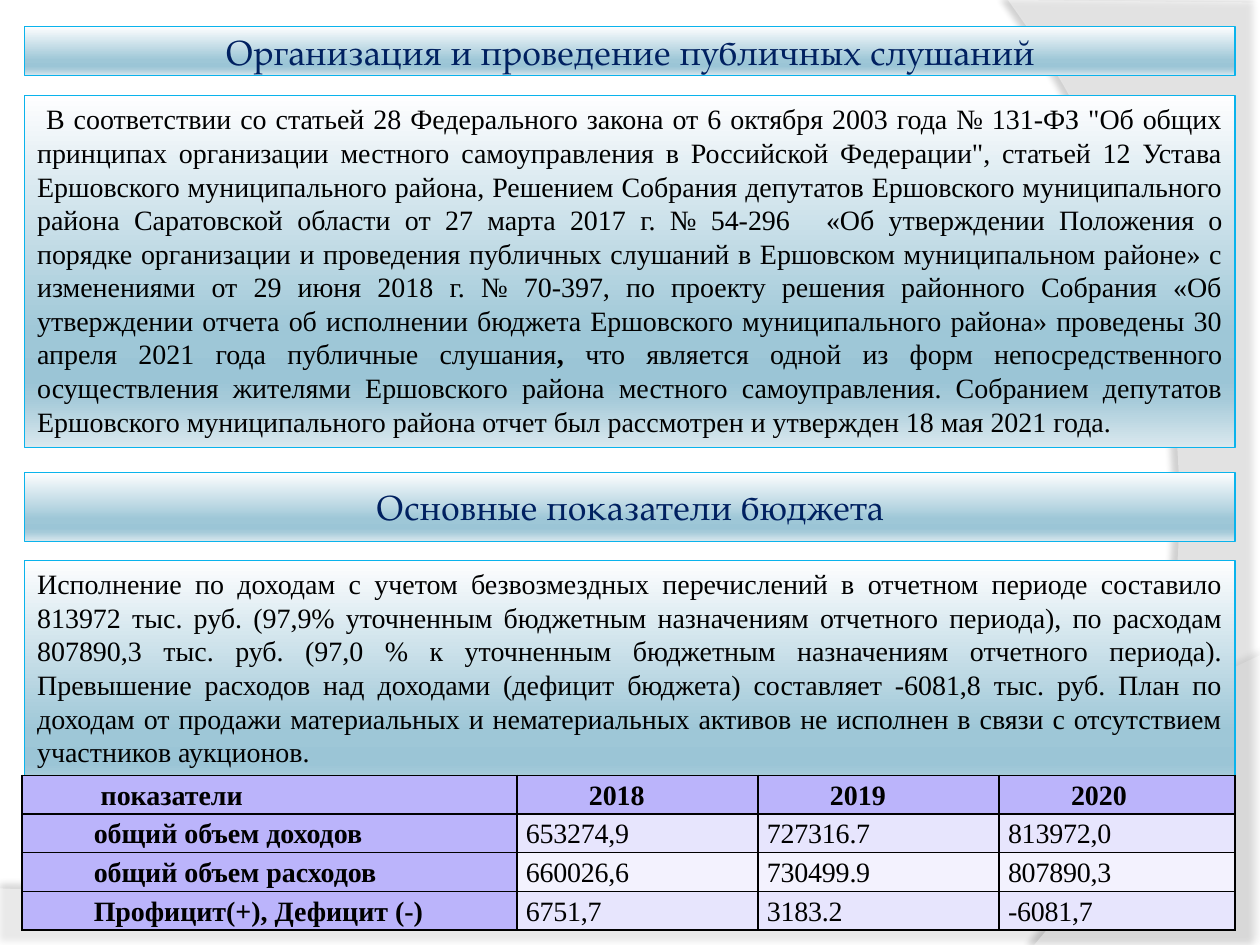
import pptx
import pptx.util
import pptx.dml.color
import pptx.enum.shapes
import pptx.enum.text
import pptx.oxml
import pptx.oxml.ns

Cm, Pt = pptx.util.Cm, pptx.util.Pt
RGB = pptx.dml.color.RGBColor
ALIGN = pptx.enum.text.PP_ALIGN
ANCHOR = pptx.enum.text.MSO_ANCHOR
qn = pptx.oxml.ns.qn

WHITE = RGB(0xFF, 0xFF, 0xFF)
BLACK = RGB(0, 0, 0)
NAVY = RGB(0x00, 0x20, 0x60)
CYAN = RGB(0x0A, 0xB3, 0xEC)
VIOLET = RGB(0xBB, 0xB4, 0xFB)
BANDS = [RGB(0xE7, 0xE5, 0xFD), RGB(0xF3, 0xF2, 0xFE)]
STOPS = [
    (0, RGB(0xFE, 0xFE, 0xFF)),
    (68, RGB(0x9E, 0xC7, 0xD7)),
    (81, RGB(0x9B, 0xC5, 0xD6)),
    (86, RGB(0xA5, 0xCA, 0xD9)),
    (100, RGB(0xDA, 0xE8, 0xEE)),
]
SERIF = "Times New Roman"
TITLE = "TeX Gyre Pagella"

LAW = [
    (' В соответствии со статьей 28 Федерального закона от 6 октября 2003 года № 131-ФЗ "Об общих '
     'принципах организации местного самоуправления в Российской Федерации", статьей 12 Устава '
     'Ершовского муниципального района, Решением Собрания депутатов Ершовского муниципального '
     'района Саратовской области от 27 марта 2017 г. № 54-296', {}),
    (" ", {"gap": 12}),
    ("«Об утверждении Положения о порядке организации и проведения публичных слушаний в Ершовском "
     "муниципальном районе» с изменениями от 29 июня 2018 г. № 70-397, по проекту решения "
     "районного Собрания «Об утверждении отчета об исполнении бюджета Ершовского муниципального "
     "района» проведены 30 апреля 2021 года публичные слушания", {}),
    (", ", {"bold": True}),
    ("что является одной из форм непосредственного осуществления жителями Ершовского района "
     "местного самоуправления. Собранием депутатов Ершовского муниципального района отчет был "
     "рассмотрен и утвержден 18 мая 2021 года.", {}),
]
RESULT = [
    ("Исполнение по доходам с учетом безвозмездных перечислений в отчетном периоде составило "
     "813972 тыс. руб. (97,9% уточненным бюджетным назначениям отчетного периода), по расходам "
     "807890,3 тыс. руб. (97,0 % к уточненным бюджетным назначениям отчетного периода). "
     "Превышение расходов над доходами (дефицит бюджета) составляет -6081,8 тыс. руб. План по "
     "доходам от продажи материальных и нематериальных активов не исполнен в связи с отсутствием "
     "участников аукционов.", {}),
]
ROWS = [
    (" показатели", "2018", "2019", "2020"),
    ("общий объем доходов", "653274,9", "727316.7", "813972,0"),
    ("общий объем расходов", "660026,6", "730499.9", "807890,3"),
    ("Профицит(+), Дефицит (-)", "6751,7", "3183.2", "-6081,7"),
]


def curve(a, b, c, d, count=40):
    """Points on a cubic Bezier curve from a to d, without a."""
    for i in range(1, count + 1):
        t = i / count
        s = 1 - t
        yield tuple(s**3 * p + 3 * s * s * t * q + 3 * s * t * t * r + t**3 * u
                    for p, q, r, u in zip(a, b, c, d))


def node(tag, inner):
    space = pptx.oxml.ns.nsdecls("a")
    name = tag.split()[0]
    return pptx.oxml.parse_xml(f"<a:{tag} {space}>{inner}</a:{name}>")


class Deck:
    def __init__(self):
        self.file = pptx.Presentation()
        self.file.slide_width, self.file.slide_height = Cm(25.4), Cm(19.05)
        self.slide = self.file.slides.add_slide(self.file.slide_layouts[6])

    def run(self, para, text, size=16, font=SERIF, color=BLACK, bold=False, gap=0):
        run = para.add_run()
        run.text = text
        run.font.size, run.font.name, run.font.bold = Pt(size), font, bold
        run.font.color.rgb = color
        if gap:
            run.font._element.set("spc", str(round(gap * 100)))

    def wave(self, points, alpha, shade, blur, dist, angle):
        """Translucent white outline with a soft shadow."""
        dots = [(Cm(x), Cm(y)) for x, y in points]
        pen = self.slide.shapes.build_freeform(*dots[0], scale=1.0)
        pen.add_line_segments(dots[1:], close=True)
        shape = pen.convert_to_shape()
        shape.line.fill.background()
        shape.fill.solid()
        shape.fill.fore_color.rgb = WHITE
        props = shape._element.spPr
        tint = props.find(qn("a:solidFill"))[0]
        tint.append(node(f'alpha val="{alpha * 1000}"', ""))
        props.append(node(
            "effectLst",
            f'<a:outerShdw blurRad="{Pt(blur)}" dist="{Pt(dist)}" dir="{angle * 60000}" '
            f'algn="ctr" rotWithShape="0"><a:srgbClr val="{BLACK}">'
            f'<a:alpha val="{shade * 1000}"/></a:srgbClr></a:outerShdw>'))

    def panel(self, top, height):
        kind = pptx.enum.shapes.MSO_SHAPE.RECTANGLE
        shape = self.slide.shapes.add_shape(kind, Cm(0.5), Cm(top), Cm(24.4), Cm(height))
        shape.shadow.inherit = False
        shape.line.color.rgb = CYAN
        shape.line.width = Pt(0.75)
        shape.fill.gradient()
        shape.fill.gradient_angle = 270
        stops = shape._element.spPr.find(qn("a:gradFill")).find(qn("a:gsLst"))
        for old in list(stops):
            stops.remove(old)
        for pos, color in STOPS:
            stops.append(node(f'gs pos="{pos * 1000}"', f'<a:srgbClr val="{color}"/>'))
        shape.text_frame.word_wrap = True
        return shape.text_frame

    def head(self, top, height, text):
        frame = self.panel(top, height)
        frame.vertical_anchor = ANCHOR.MIDDLE
        frame.margin_left = frame.margin_right = Cm(0.13)
        para = frame.paragraphs[0]
        para.alignment = ALIGN.CENTER
        self.run(para, text, 20, TITLE, NAVY)

    def body(self, top, height, runs):
        frame = self.panel(top, height)
        frame.vertical_anchor = ANCHOR.TOP
        frame.auto_size = pptx.enum.text.MSO_AUTO_SIZE.SHAPE_TO_FIT_TEXT
        para = frame.paragraphs[0]
        para.alignment = ALIGN.JUSTIFY
        for text, style in runs:
            self.run(para, text, **style)

    def cell(self, cell, text, fill, label):
        props = cell._tc.get_or_add_tcPr()
        for side in "LRTB":
            props.append(node(f'ln{side} w="{Pt(1)}"',
                              f'<a:solidFill><a:srgbClr val="{BLACK}"/></a:solidFill>'))
        cell.fill.solid()
        cell.fill.fore_color.rgb = fill
        cell.margin_left = cell.margin_right = Cm(0.18)
        cell.margin_top = cell.margin_bottom = 0
        para = cell.text_frame.paragraphs[0]
        para.line_spacing = 1.15
        if label:
            para.alignment = ALIGN.JUSTIFY
            para._p.get_or_add_pPr().set("marL", str(Cm(1.27)))
        else:
            para.space_after = Pt(10)
        self.run(para, text, bold=label, gap=0 if label else -0.1)

    def table(self, left, top, widths, high, rows):
        grid = self.slide.shapes.add_table(
            len(rows), len(widths), Cm(left), Cm(top),
            Cm(sum(widths)), Cm(high * len(rows))).table
        grid.first_row = grid.horz_banding = False
        for col, width in zip(grid.columns, widths):
            col.width = Cm(width)
        for r, row in enumerate(rows):
            grid.rows[r].height = Cm(high)
            for c, text in enumerate(row):
                label = r == 0 or c == 0
                self.cell(grid.cell(r, c), text, VIOLET if label else BANDS[(r - 1) % 2], label)


def main():
    deck = Deck()
    low = [(0, 17.91), (0, 19.08), (25.4, 19.08), (25.4, 13.21)]
    deck.wave(low + list(curve(low[-1], (14.2, 18.52), (9.93, 18.26), low[0])),
              45, 35, 4, 3.5, 270)
    side = [(25.4, 0.05), (25.4, 19.05), (20.85, 19.05)]
    deck.wave(side + list(curve(side[-1], (23.75, 15.72), (25.86, 7.62), (20.32, 0))),
              40, 45, 4, 4, 180)
    deck.head(0.53, 1, "Организация и проведение публичных слушаний")
    deck.body(1.93, 7.09, LAW)
    deck.head(9.52, 1.4, "Основные показатели бюджета")
    deck.body(11.3, 5.05, RESULT)
    deck.table(0.44, 15.63, [9.98, 4.86, 4.86, 4.76], 0.78, ROWS)
    deck.file.save("out.pptx")


if __name__ == "__main__":
    main()
